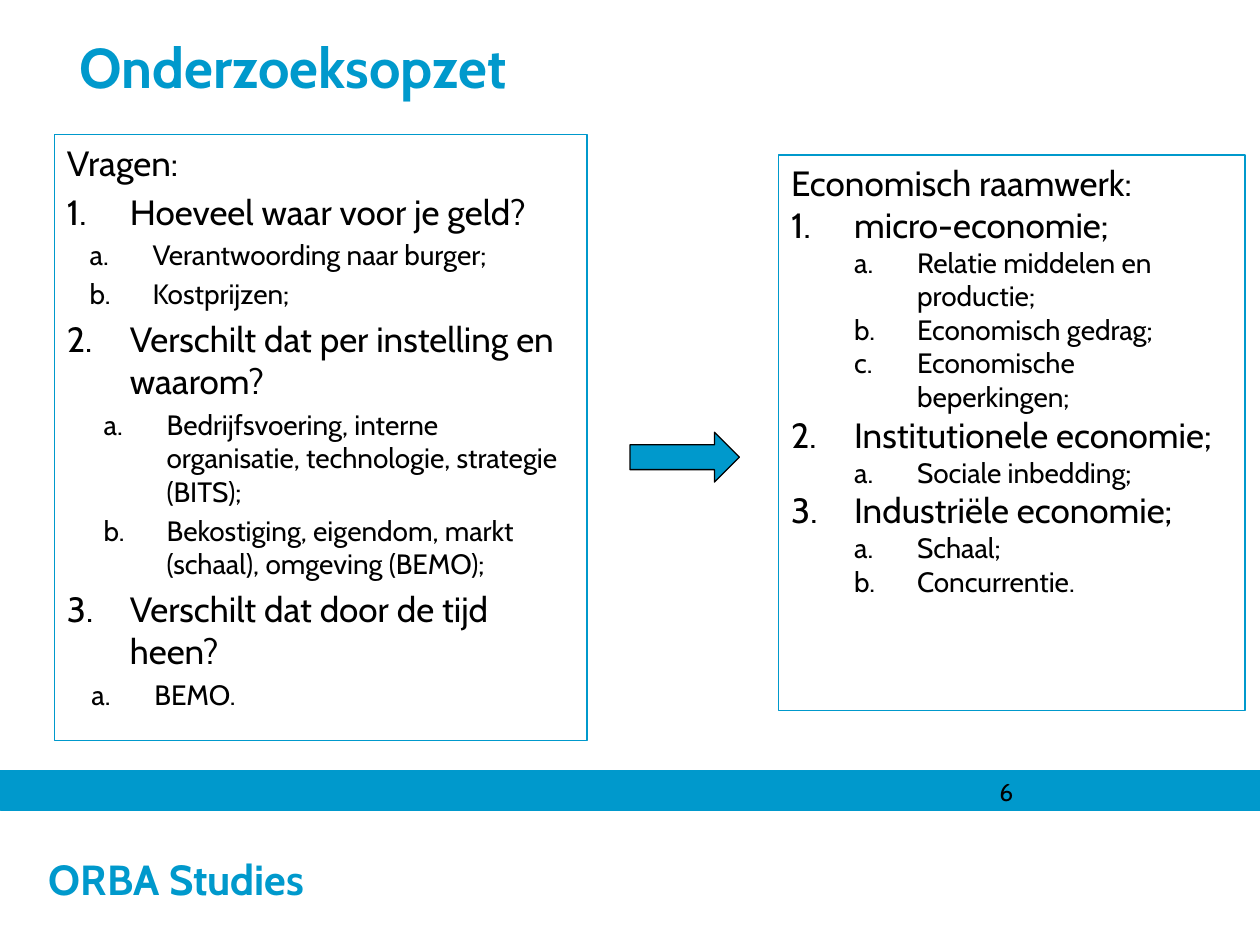
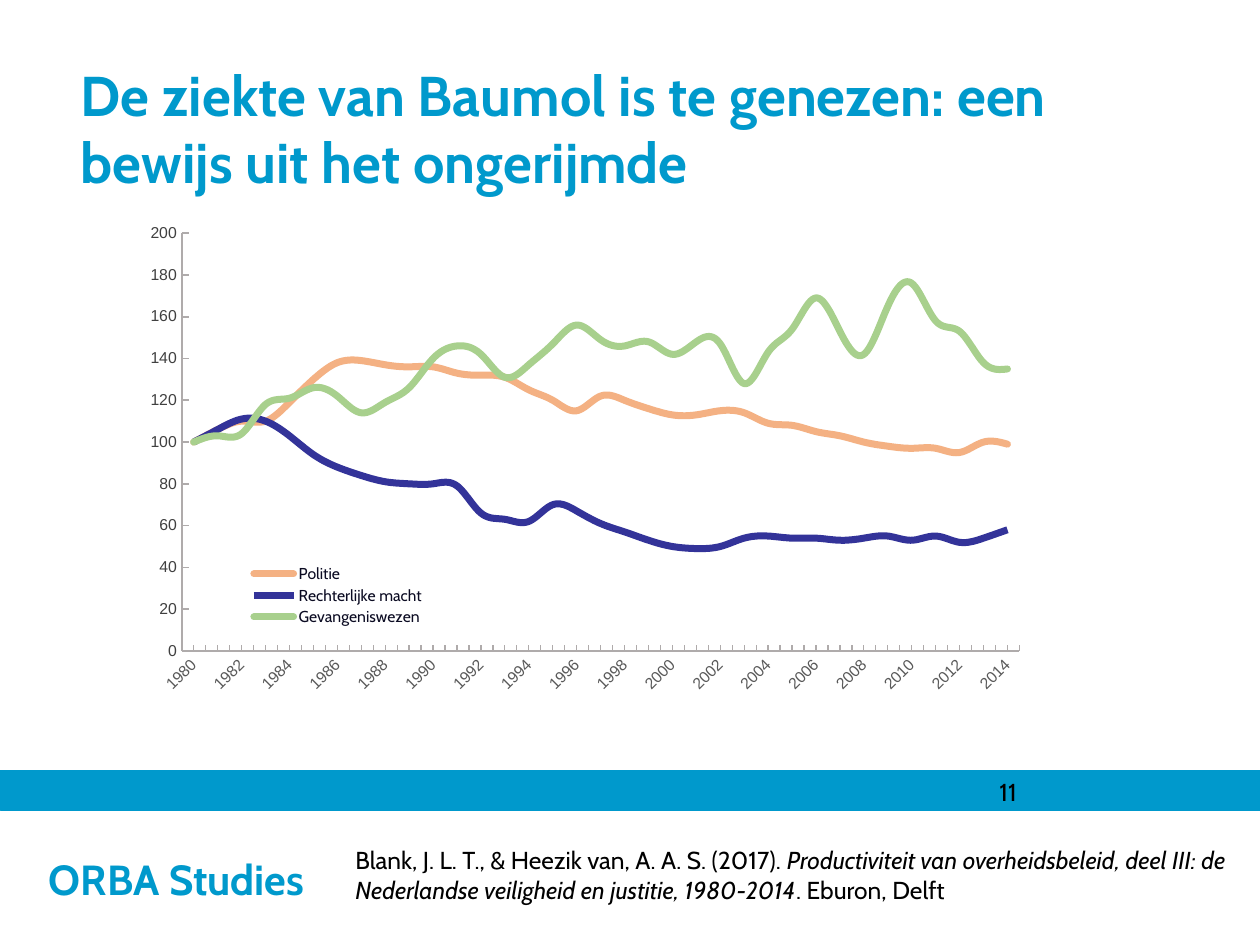
import pptx
import pptx.chart.data
import pptx.dml.color
import pptx.enum.chart
import pptx.enum.shapes
import pptx.enum.text
import pptx.oxml
import pptx.oxml.ns
import pptx.util
from lxml import etree

Pt = pptx.util.Pt
qn = pptx.oxml.ns.qn
Shape = pptx.enum.shapes.MSO_SHAPE
Anchor = pptx.enum.text.MSO_ANCHOR
Tick = pptx.enum.chart.XL_TICK_MARK

BLUE = "0099CC"
BLACK = "000000"
WHITE = "FFFFFF"
GREY = "AFABAB"

QUESTIONS = [
    ("Vragen:", 0, 0),
    ("Hoeveel waar voor je geld?", 0, 36),
    ("Verantwoording naar burger;", 1, 49),
    ("Kostprijzen;", 1, 49),
    ("Verschilt dat per instelling en waarom?", 0, 36),
    ("Bedrijfsvoering, interne organisatie, technologie, strategie (BITS);", 1, 57),
    ("Bekostiging, eigendom, markt (schaal), omgeving (BEMO);", 1, 57),
    ("Verschilt dat door de tijd heen?", 0, 36),
    ("BEMO.", 1, 50),
]

FRAMEWORK = [
    ("Economisch raamwerk:", 0, 0),
    ("micro-economie;", 0, 36),
    ("Relatie middelen en productie;", 1, 72),
    ("Economisch gedrag;", 1, 72),
    ("Economische beperkingen;", 1, 72),
    ("Institutionele economie;", 0, 36),
    ("Sociale inbedding;", 1, 72),
    ("Industriële economie;", 0, 36),
    ("Schaal;", 1, 72),
    ("Concurrentie.", 1, 72),
]

YEARS = [str(year) for year in range(1980, 2015)]
SECTORS = [
    ("Politie", "F4B183", "rnd",
     [100, 106, 110, 110, 119, 130, 138, 139, 137, 136, 136, 133, 132, 131, 125, 120, 115, 122,
      120, 116, 113, 113, 115, 114, 109, 108, 105, 103, 100, 98, 97, 97, 95, 100, 99]),
    ("Rechterlijke macht", "333399", "flat",
     [100, 106, 111, 110, 103, 94, 88, 84, 81, 80, 80, 79, 66, 63, 62, 70, 67, 61,
      57, 53, 50, 49, 50, 54, 55, 54, 54, 53, 54, 55, 53, 55, 52, 54, 58]),
    ("Gevangeniswezen", "A8D08D", "rnd",
     [100, 103, 104, 118, 121, 126, 122, 114, 119, 126, 140, 146, 142, 131, 137, 147, 156, 149,
      146, 148, 142, 148, 147, 128, 143, 154, 169, 153, 142, 165, 176, 158, 153, 138, 135]),
]


def rgb(value):
    return pptx.dml.color.RGBColor.from_string(value)


def style_font(font, size, color=BLACK, name="Cabin", bold=False, italic=False):
    font.name = name
    font.size = Pt(size)
    font.color.rgb = rgb(color)
    font.bold = bold
    font.italic = italic


def write(para, text, **style):
    span = para.add_run()
    span.text = text
    style_font(span.font, **style)


def place(shape, area):
    shape.left, shape.top, shape.width, shape.height = map(Pt, area)


def outline(shape, color):
    shape.line.color.rgb = rgb(color)
    shape.line.width = Pt(0.75)


def set_layout(parent, position, inner, **fractions):
    for old in parent.findall(qn("c:layout")):
        parent.remove(old)
    layout = etree.Element(qn("c:layout"))
    manual = etree.SubElement(layout, qn("c:manualLayout"))
    if inner:
        etree.SubElement(manual, qn("c:layoutTarget")).set("val", "inner")
    for side in "xy":
        etree.SubElement(manual, qn(f"c:{side}Mode")).set("val", "edge")
    for key, value in fractions.items():
        etree.SubElement(manual, qn(f"c:{key}")).set("val", str(value))
    parent.insert(position, layout)


class Slides:
    def __init__(self):
        self.deck = pptx.Presentation()
        self.deck.slide_width = Pt(720)
        self.deck.slide_height = Pt(540)
        self.page = None

    def start(self, layout, title, title_area, number):
        self.page = self.deck.slides.add_slide(self.deck.slide_layouts[layout])
        footer = self.shape(Shape.RECTANGLE, (-0.5, 464, 721, 76), WHITE)
        frame = footer.text_frame
        frame.margin_left = Pt(28.5)
        frame.vertical_anchor = Anchor.MIDDLE
        frame.paragraphs[0].alignment = pptx.enum.text.PP_ALIGN.LEFT
        write(frame.paragraphs[0], "ORBA Studies", size=24, color=BLUE, bold=True)
        self.shape(Shape.RECTANGLE, (0.5, 440.5, 720, 22.5), BLUE, BLUE)
        self.title(title, title_area)
        self.text((564, 440.5, 150, 18), [(str(number), {})])

    def title(self, text, area):
        box = self.page.shapes.title
        place(box, area)
        frame = box.text_frame
        frame.auto_size = pptx.enum.text.MSO_AUTO_SIZE.NONE
        frame.vertical_anchor = Anchor.TOP
        frame.paragraphs[0].alignment = pptx.enum.text.PP_ALIGN.LEFT
        write(frame.paragraphs[0], text, size=32, color=BLUE, bold=True)

    def shape(self, kind, area, fill, line=None):
        shape = self.page.shapes.add_shape(kind, *map(Pt, area))
        shape.shadow.inherit = False
        shape.fill.solid()
        shape.fill.fore_color.rgb = rgb(fill)
        if line:
            outline(shape, line)
        else:
            shape.line.fill.background()
        return shape

    def text(self, area, spans):
        box = self.page.shapes.add_textbox(*map(Pt, area))
        box.text_frame.word_wrap = True
        for text, style in spans:
            write(box.text_frame.paragraphs[0], text, size=14, **style)
        return box

    def outline_list(self, box, area, entries):
        place(box, area)
        outline(box, BLUE)
        frame = box.text_frame
        frame.word_wrap = True
        frame.auto_size = pptx.enum.text.MSO_AUTO_SIZE.NONE
        for index, (text, level, indent) in enumerate(entries):
            para = frame.add_paragraph() if index else frame.paragraphs[0]
            para.level = level
            if index == 0:
                para.space_before = Pt(0)
            properties = para._p.get_or_add_pPr()
            properties.set("marL", str(Pt(indent)))
            properties.set("indent", str(-Pt(min(indent, 36))))
            if indent:
                number = etree.SubElement(properties, qn("a:buAutoNum"))
                number.set("type", "alphaLcPeriod" if level else "arabicPeriod")
            else:
                etree.SubElement(properties, qn("a:buNone"))
            write(para, text, size=16 if level else 20)

    def line_chart(self, area, categories, series):
        data = pptx.chart.data.CategoryChartData()
        data.categories = categories
        for name, _, _, values in series:
            data.add_series(name, values)
        chart = self.page.shapes.add_chart(
            pptx.enum.chart.XL_CHART_TYPE.LINE, *map(Pt, area), data).chart
        style_font(chart.font, 10)
        chart.has_title = False
        for line, (_, color, cap, _) in zip(chart.plots[0].series, series):
            line.smooth = True
            line.marker.style = pptx.enum.chart.XL_MARKER_STYLE.NONE
            line.format.line.color.rgb = rgb(color)
            line.format.line.width = Pt(4)
            line.format.line._ln.set("cap", cap)
        self.axes(chart)
        chart.has_legend = True
        legend = chart.legend
        legend.position = pptx.enum.chart.XL_LEGEND_POSITION.RIGHT
        legend.include_in_layout = True
        style_font(legend.font, 9, "0B0B22")
        set_layout(chart.element.xpath(".//c:legend")[0], 1, False, x=0.13, y=0.71, w=0.21, h=0.14)
        set_layout(chart.element.xpath(".//c:plotArea")[0], 0, True, x=0.064, y=0.018, w=0.918, h=0.879)

    def axes(self, chart):
        years, values = chart.category_axis, chart.value_axis
        for axis, color, width in ((years, "595959", 0.75), (values, "404040", 1)):
            style_font(axis.tick_labels.font, 9, color, "Arial")
            axis.format.line.color.rgb = rgb(GREY)
            axis.format.line.width = Pt(width)
            axis.has_major_gridlines = False
        years.major_tick_mark = Tick.NONE
        years.minor_tick_mark = Tick.INSIDE
        values.major_tick_mark = Tick.INSIDE
        values.minimum_scale, values.maximum_scale, values.major_unit = 0, 200, 20
        axis = chart.element.xpath(".//c:catAx")[0]
        axis.xpath("./c:txPr/a:bodyPr")[0].set("rot", "-2700000")
        skip = etree.Element(qn("c:tickLblSkip"))
        skip.set("val", "2")
        axis.xpath("./c:noMultiLvlLbl")[0].addprevious(skip)


def main():
    slides = Slides()

    slides.start(1, "Onderzoeksopzet", (38, 15, 644, 66), 6)
    slides.outline_list(slides.page.placeholders[1], (31, 77, 304.5, 346), QUESTIONS)
    framework = slides.text((445, 88.5, 266.5, 317.5), [])
    slides.outline_list(framework, (445, 88.5, 266.5, 317.5), FRAMEWORK)
    slides.shape(Shape.RIGHT_ARROW, (360, 247, 62.5, 28.5), BLUE, BLACK)

    slides.start(5, "De ziekte van Baumol is te genezen: een bewijs uit het ongerijmde",
                 (39, 31, 644, 85), 11)
    slides.line_chart((70.5, 128, 521.5, 272), YEARS, SECTORS)
    slides.text((196, 479.5, 524, 41), [
        ("Blank, J. L. T., & Heezik van, A. A. S. (2017). ", {}),
        ("Productiviteit van overheidsbeleid, deel III: de Nederlandse veiligheid en justitie, 1980-2014",
         {"italic": True}),
        (". Eburon, Delft", {}),
    ])

    slides.deck.save("out.pptx")


if __name__ == "__main__":
    main()
